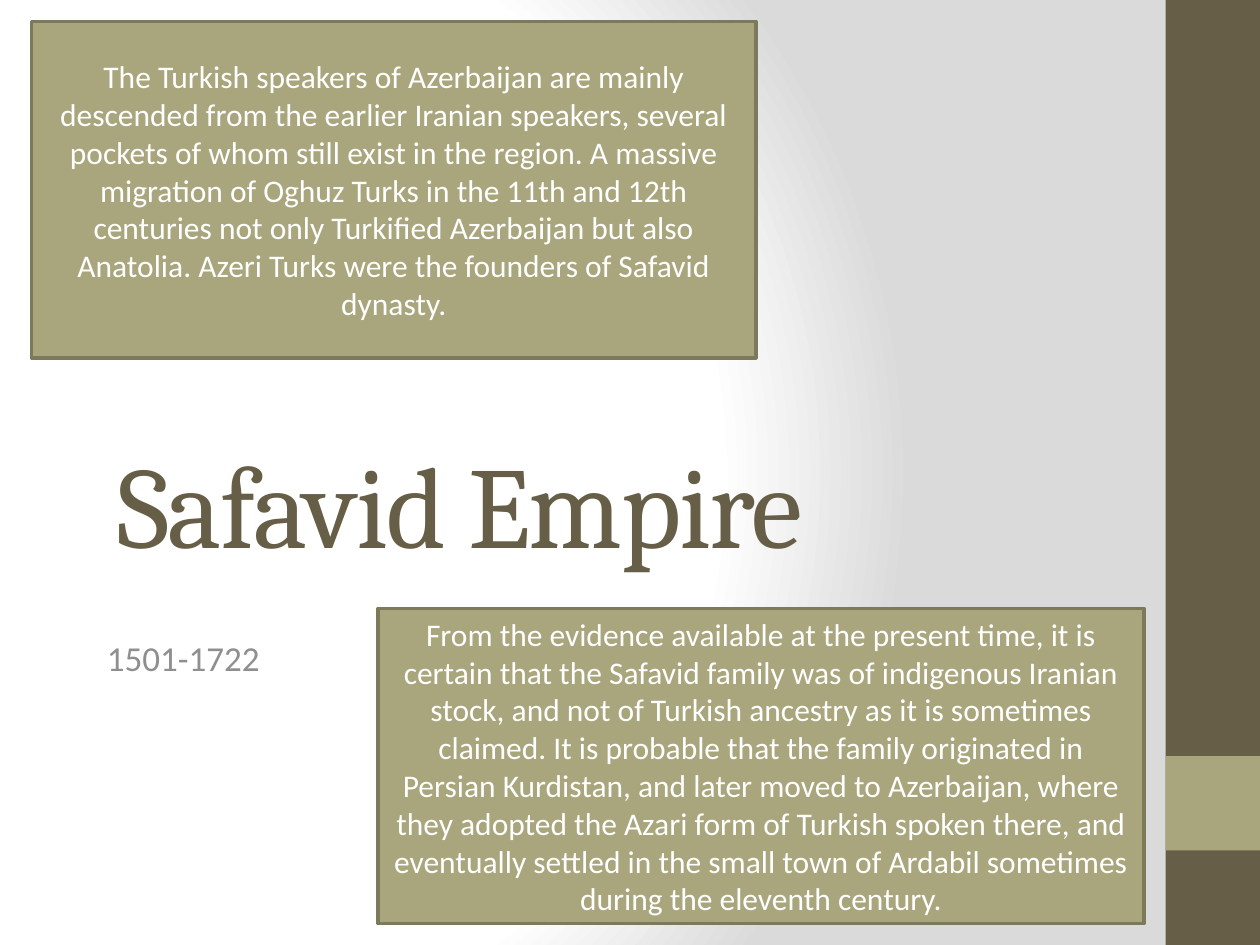
from dataclasses import dataclass

from pptx import Presentation, oxml
from pptx.dml.color import RGBColor
from pptx.enum import shapes, text
from pptx.oxml import ns
from pptx.util import Inches, Pt

BROWN = RGBColor(0x67, 0x5E, 0x47)
OLIVE = RGBColor(0xA9, 0xA5, 0x7C)
DARK_OLIVE = RGBColor(0x7D, 0x7A, 0x5C)
GRAY = RGBColor(0x8F, 0x8F, 0x8D)
WHITE = RGBColor(0xFF, 0xFF, 0xFF)
SILVER = RGBColor(0xDA, 0xDA, 0xDA)
BACKGROUND_STOPS = ((0, WHITE), (75, WHITE), (100, SILVER))


@dataclass
class Area:
    left: float
    top: float
    width: float
    height: float

    def lengths(self) -> tuple:
        return tuple(map(Inches, (self.left, self.top, self.width, self.height)))


@dataclass
class Note:
    area: Area
    words: str


BANDS = (
    (Area(9.25, 0, 0.75, 7.5), BROWN),
    (Area(9.25, 6, 0.75, 0.75), OLIVE),
)
NOTES = (
    Note(
        Area(0.25, 0.17, 5.75, 2.67),
        "The Turkish speakers of Azerbaijan are mainly descended from the earlier "
        "Iranian speakers, several pockets of whom still exist in the region. A massive "
        "migration of Oghuz Turks in the 11th and 12th centuries not only Turkified "
        "Azerbaijan but also Anatolia. Azeri Turks were the founders of Safavid dynasty.",
    ),
    Note(
        Area(3, 4.83, 6.08, 2.5),
        "From the evidence available at the present time, it is certain that the Safavid "
        "family was of indigenous Iranian stock, and not of Turkish ancestry as it is "
        "sometimes claimed. It is probable that the family originated in Persian "
        "Kurdistan, and later moved to Azerbaijan, where they adopted the Azari form of "
        "Turkish spoken there, and eventually settled in the small town of Ardabil "
        "sometimes during the eleventh century.",
    ),
)


def paint_background(page) -> None:
    page.background.fill.solid()
    properties = page.element.find(".//" + ns.qn("p:bgPr"))
    stops = "".join(
        f'<a:gs pos="{percent * 1000}"><a:srgbClr val="{color}"/></a:gs>'
        for percent, color in BACKGROUND_STOPS
    )
    gradient = oxml.parse_xml(
        f'<a:gradFill {ns.nsdecls("a")} rotWithShape="1"><a:gsLst>{stops}</a:gsLst>'
        '<a:path path="circle"><a:fillToRect l="20000" t="50000" r="100000" b="50000"/>'
        "</a:path></a:gradFill>"
    )
    properties.replace(properties[0], gradient)


def write(box, words: str, font: str, size: float, color: RGBColor,
          align=text.PP_ALIGN.LEFT, anchor=text.MSO_ANCHOR.TOP):
    frame = box.text_frame
    frame.text = words
    frame.word_wrap = True
    frame.auto_size = text.MSO_AUTO_SIZE.NONE
    frame.vertical_anchor = anchor
    para = frame.paragraphs[0]
    para.alignment = align
    span = para.runs[0]
    span.font.name = font
    span.font.size = Pt(size)
    span.font.color.rgb = color
    return span


def add_rectangle(page, area: Area, color: RGBColor):
    box = page.shapes.add_shape(shapes.MSO_SHAPE.RECTANGLE, *area.lengths())
    box.shadow.inherit = False
    box.fill.solid()
    box.fill.fore_color.rgb = color
    box.line.fill.background()
    return box


def add_title(page, area: Area, words: str) -> None:
    title = page.shapes.title
    title.left, title.top, title.width, title.height = area.lengths()
    span = write(title, words, "Cambria", 66, BROWN, anchor=text.MSO_ANCHOR.BOTTOM)
    span.font._element.set("spc", "-100")


def add_note(page, note: Note) -> None:
    box = add_rectangle(page, note.area, OLIVE)
    box.line.color.rgb = DARK_OLIVE
    box.line.width = Pt(2)
    write(box, note.words, "Calibri", 18, WHITE,
          text.PP_ALIGN.CENTER, text.MSO_ANCHOR.MIDDLE)


def main() -> None:
    deck = Presentation()
    deck.slide_width, deck.slide_height = Inches(10), Inches(7.5)
    page = deck.slides.add_slide(deck.slide_layouts[5])
    paint_background(page)
    for area, color in BANDS:
        add_rectangle(page, area, color)
    add_title(page, Area(0.83, 1.75, 8.25, 2.84), "Safavid Empire")
    dates = page.shapes.add_textbox(*Area(0.75, 5, 7.07, 1.17).lengths())
    write(dates, "1501-1722", "Calibri", 20, GRAY)
    for note in NOTES:
        add_note(page, note)
    deck.save("out.pptx")


if __name__ == "__main__":
    main()
